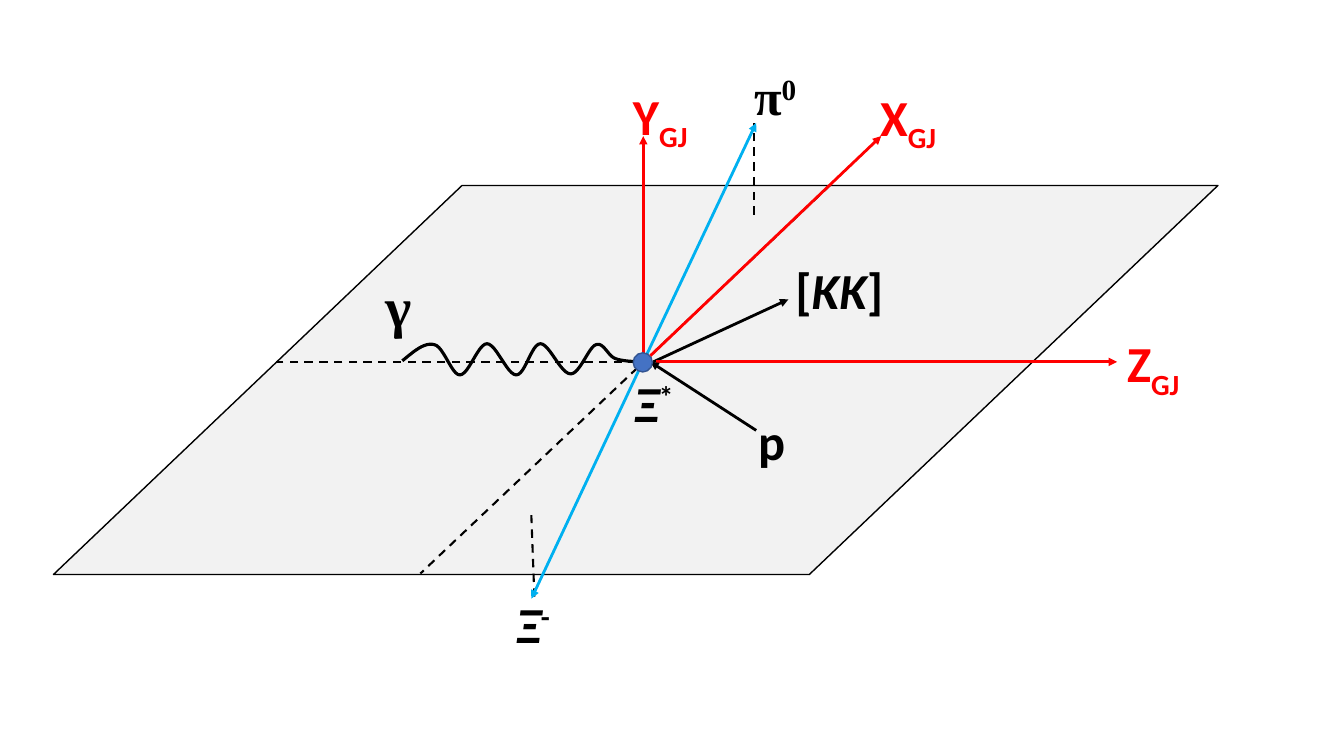
from lxml.etree import SubElement
from pptx import Presentation
from pptx.dml.color import RGBColor
from pptx.enum.dml import MSO_LINE
from pptx.enum.shapes import MSO_CONNECTOR, MSO_SHAPE
from pptx.enum.text import MSO_AUTO_SIZE
from pptx.oxml.ns import qn
from pptx.util import Inches, Pt

BLACK, RED, CYAN = "000000", "FF0000", "00B0F0"
SANS, SERIF = "Calibri", "Times New Roman"

PLANE = (0.53, 1.84, 11.55, 3.86)
VERTEX = (6.28, 3.5, 0.19, 0.19)

DASHED_LINES = [
    ((8.23, 1.84), (4.17, 5.69)),
    ((10.26, 3.59), (2.74, 3.59)),
    ((7.48, 2.13), (7.48, 1.22)),
    ((5.3, 5.92), (5.27, 5.11)),
]
ARROWS = [
    ((6.48, 3.59), (7.82, 2.97), BLACK),
    ((6.38, 3.59), (7.5, 1.22), CYAN),
    ((6.39, 3.56), (5.27, 5.94), CYAN),
    ((6.45, 3.53), (8.74, 1.35), RED),
    ((6.51, 3.59), (11.08, 3.59), RED),
    ((6.38, 3.56), (6.38, 1.35), RED),
    ((7.5, 4.27), (6.45, 3.59), BLACK),
]

WAVE_START = (3.99, 3.58)
WAVE_CURVES = [
    ((4.1, 3.49), (4.21, 3.39), (4.31, 3.42)),
    ((4.4, 3.44), (4.48, 3.72), (4.56, 3.72)),
    ((4.65, 3.72), (4.74, 3.41), (4.83, 3.41)),
    ((4.92, 3.41), (5.03, 3.72), (5.12, 3.72)),
    ((5.21, 3.72), (5.27, 3.41), (5.36, 3.41)),
    ((5.45, 3.41), (5.56, 3.71), (5.66, 3.71)),
    ((5.75, 3.71), (5.84, 3.44), (5.91, 3.42)),
    ((5.99, 3.39), (6.03, 3.54), (6.11, 3.56)),
    ((6.19, 3.59), (6.38, 3.59), (6.38, 3.59)),
]
STEPS_PER_CURVE = 12

PLAIN, ITALIC, SUB, SUPER = (False, 0), (True, 0), (False, -25), (False, 30)
LABELS = [
    ((6.18, 0.79, 0.77, 0.71), SANS, 36, RED, [("Y", PLAIN), ("GJ", SUB)]),
    ((8.63, 0.8, 0.79, 0.71), SANS, 36, RED, [("X", PLAIN), ("GJ", SUB)]),
    ((11.08, 3.25, 0.76, 0.71), SANS, 36, RED, [("Z", PLAIN), ("GJ", SUB)]),
    ((7.38, 0.6, 0.65, 0.71), SERIF, 36, BLACK, [("π", PLAIN), ("0", SUPER)]),
    ((5.02, 5.83, 0.55, 0.71), SANS, 36, BLACK, [("Ξ", ITALIC), ("-", SUPER)]),
    ((7.42, 4.02, 0.47, 0.71), SANS, 36, BLACK, [("p", PLAIN)]),
    ((7.79, 2.52, 1.12, 0.71), SANS, 36, BLACK,
     [("[", PLAIN), ("KK", ITALIC), ("]", PLAIN)]),
    ((3.73, 2.64, 0.46, 0.77), SERIF, 40, BLACK, [("γ", PLAIN)]),
    ((6.19, 3.64, 0.62, 0.71), SANS, 36, BLACK, [("Ξ", ITALIC), ("*", SUPER)]),
]


def inches(values):
    return [Inches(value) for value in values]


def set_color(color_format, color):
    color_format.rgb = RGBColor.from_string(color)


def set_line(shape, color, width):
    shape.line.fill.solid()
    set_color(shape.line.fill.fore_color, color)
    shape.line.width = Pt(width)


def add_filled_shape(shapes, kind, box, fill, outline):
    shape = shapes.add_shape(kind, *inches(box))
    shape.shadow.inherit = False
    shape.fill.solid()
    set_color(shape.fill.fore_color, fill)
    set_line(shape, outline, 1)
    return shape


def add_line(shapes, start, end, color, width):
    connector = shapes.add_connector(
        MSO_CONNECTOR.STRAIGHT, *inches(start + end))
    set_line(connector, color, width)
    return connector


def remove_shadow(connector):
    SubElement(connector._element.spPr, qn("a:effectLst"))


def add_arrow(shapes, start, end, color):
    arrow = add_line(shapes, start, end, color, 2)
    SubElement(arrow.line._get_or_add_ln(), qn("a:tailEnd"), type="triangle")
    remove_shadow(arrow)


def add_dashed_line(shapes, start, end):
    line = add_line(shapes, start, end, BLACK, 1.5)
    line.line.dash_style = MSO_LINE.DASH
    remove_shadow(line)


def curve_point(points, t):
    weights = ((1 - t) ** 3, 3 * t * (1 - t) ** 2, 3 * t ** 2 * (1 - t), t ** 3)
    return tuple(
        Inches(sum(weight * point[axis] for weight, point in zip(weights, points)))
        for axis in (0, 1))


def add_wave(shapes):
    vertices = []
    start = WAVE_START
    for curve in WAVE_CURVES:
        vertices += [curve_point((start,) + curve, step / STEPS_PER_CURVE)
                     for step in range(1, STEPS_PER_CURVE + 1)]
        start = curve[-1]
    builder = shapes.build_freeform(*inches(WAVE_START))
    builder.add_line_segments(vertices, close=False)
    wave = builder.convert_to_shape()
    wave.shadow.inherit = False
    wave.fill.background()
    set_line(wave, BLACK, 2.25)


def add_label(shapes, box, font_name, size, color, parts):
    text_frame = shapes.add_textbox(*inches(box)).text_frame
    text_frame.word_wrap = False
    text_frame.auto_size = MSO_AUTO_SIZE.SHAPE_TO_FIT_TEXT
    for text, (italic, baseline) in parts:
        run = text_frame.paragraphs[0].add_run()
        run.text = text
        run.font.name = font_name
        run.font.size = Pt(size)
        run.font.bold = True
        run.font.italic = italic
        set_color(run.font.color, color)
        if baseline:
            run._r.get_or_add_rPr().set("baseline", str(baseline * 1000))


def main():
    presentation = Presentation()
    presentation.slide_width, presentation.slide_height = inches((13.33, 7.5))
    slide = presentation.slides.add_slide(presentation.slide_layouts[6])
    shapes = slide.shapes

    plane = add_filled_shape(
        shapes, MSO_SHAPE.PARALLELOGRAM, PLANE, "F2F2F2", BLACK)
    plane.adjustments[0] = 1.05
    for start, end in DASHED_LINES:
        add_dashed_line(shapes, start, end)
    for start, end, color in ARROWS:
        add_arrow(shapes, start, end, color)
    add_wave(shapes)
    add_filled_shape(shapes, MSO_SHAPE.OVAL, VERTEX, "4472C4", "325491")
    for label in LABELS:
        add_label(shapes, *label)

    presentation.save("out.pptx")


if __name__ == "__main__":
    main()
